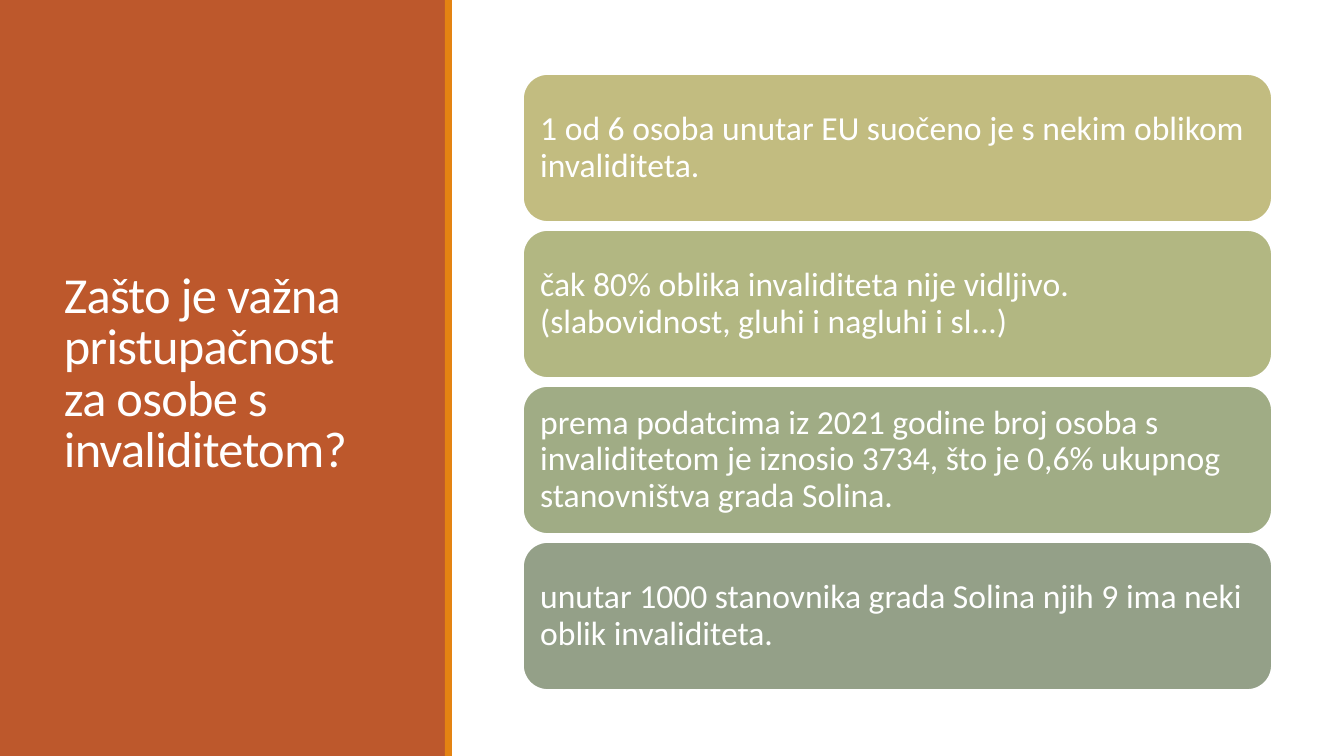
from dataclasses import dataclass

from pptx import Presentation
from pptx.dml.color import RGBColor
from pptx.enum.shapes import MSO_SHAPE as Preset
from pptx.enum.text import MSO_ANCHOR as Anchor, PP_ALIGN as Align
from pptx.util import Emu, Pt


@dataclass(frozen=True)
class Theme:
    font: str = "Calibri"
    white: str = "FFFFFF"
    rust: str = "BD582C"
    orange: str = "E48312"
    title_size: int = 36
    card_size: int = 24
    outline: float = 1.25


def px(length):
    return Emu(round(length * 914400 / 100.8))


class SlideBuilder:
    def __init__(self, page, theme):
        self.page = page
        self.theme = theme

    def block(self, preset, area, fill, line=None):
        shape = self.page.shapes.add_shape(preset, *map(px, area))
        shape.shadow.inherit = False
        shape.fill.solid()
        shape.fill.fore_color.rgb = RGBColor.from_string(fill)
        if line:
            shape.line.color.rgb = RGBColor.from_string(line)
            shape.line.width = Pt(self.theme.outline)
        else:
            shape.line.fill.background()
        return shape

    def label(self, shape, text, size, spacing, inset_x, inset_y):
        frame = shape.text_frame
        frame.word_wrap = True
        frame.vertical_anchor = Anchor.MIDDLE
        frame.margin_left = frame.margin_right = px(inset_x)
        frame.margin_top = frame.margin_bottom = px(inset_y)
        para = frame.paragraphs[0]
        para.alignment = Align.LEFT
        para.line_spacing = spacing
        para.font.name = self.theme.font
        para.font.size = Pt(size)
        para.font.color.rgb = RGBColor.from_string(self.theme.white)
        span = para.add_run()
        span.text = text
        return span

    def title(self, area, text):
        box = self.page.shapes.add_textbox(*map(px, area))
        span = self.label(box, text, self.theme.title_size, 0.85, 10, 5)
        span._r.get_or_add_rPr().set("spc", "-50")

    def card(self, area, fill, text):
        card = self.block(Preset.ROUNDED_RECTANGLE, area, fill, self.theme.white)
        self.label(card, text, self.theme.card_size, 0.9, 10, 10)


CARDS = [
    ("C2BC80", "1 od 6 osoba unutar EU suočeno je s nekim oblikom invaliditeta."),
    ("B2B782", "čak 80% oblika invaliditeta nije vidljivo. "
               "(slabovidnost, gluhi i nagluhi i sl...)"),
    ("A0AC85", "prema podatcima iz 2021 godine broj osoba s invaliditetom je "
               "iznosio 3734, što je 0,6% ukupnog stanovništva grada Solina."),
    ("94A088", "unutar 1000 stanovnika grada Solina njih 9 ima neki oblik invaliditeta."),
]
CARD_TOP, CARD_PITCH = 74, 156


def main():
    deck = Presentation()
    deck.slide_width, deck.slide_height = px(1344), px(756)
    theme = Theme()
    builder = SlideBuilder(deck.slides.add_slide(deck.slide_layouts[6]), theme)

    builder.block(Preset.RECTANGLE, (0, 0, 446, 756), theme.rust)
    builder.title((54, 57, 339, 636),
                  "Zašto je važna pristupačnost za osobe s invaliditetom?")
    builder.block(Preset.RECTANGLE, (445, 0, 7, 756), theme.orange)
    for index, (fill, text) in enumerate(CARDS):
        builder.card((523, CARD_TOP + index * CARD_PITCH, 749, 148), fill, text)

    deck.save("out.pptx")


if __name__ == "__main__":
    main()
